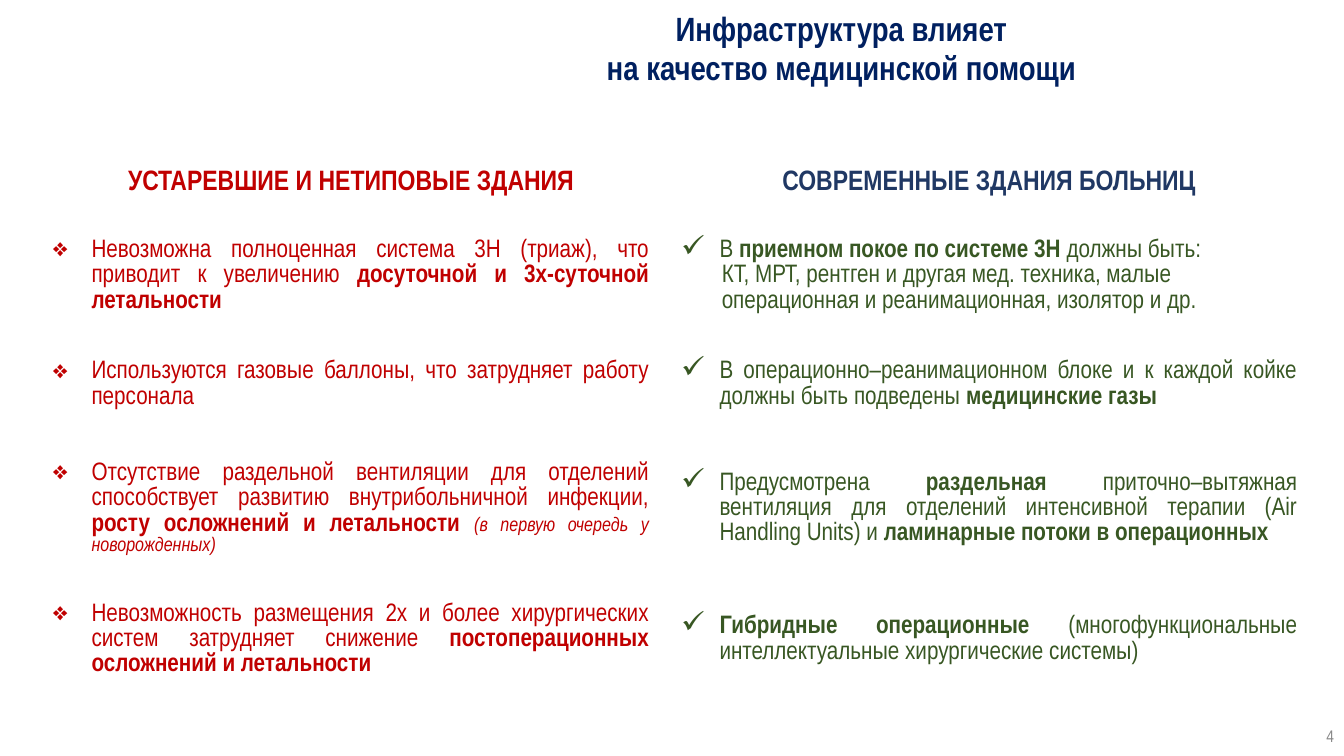
from lxml.etree import SubElement
from pptx import Presentation
from pptx.dml.color import RGBColor
from pptx.enum.shapes import MSO_SHAPE as Shape
from pptx.enum.text import MSO_ANCHOR as Anchor, PP_ALIGN as Align
from pptx.oxml.ns import qn
from pptx.util import Pt

THEME = {
    "font": "Arial Narrow",
    "title": "002060", "old": "C00000", "modern": "385723",
    "modern_heading": "203864", "number": "888888",
    "title_size": 24, "heading_size": 20, "body_size": 18,
    "note_size": 14, "number_size": 12,
}

TITLE = ["Инфраструктура влияет", "на качество медицинской помощи"]
PAGE_NUMBER = "4"

# Each cell is a list of paragraphs, each paragraph a list of (text, style) runs.
OLD = {
    "heading": "УСТАРЕВШИЕ И НЕТИПОВЫЕ ЗДАНИЯ",
    "heading_color": THEME["old"], "color": THEME["old"],
    "bullet": "❖", "bullet_percent": 100,
    "cells": [
        [[("Невозможна полноценная система 3Н (триаж), что приводит к увеличению ", ""),
          ("досуточной и 3х-суточной летальности", "bold")]],
        [[("Используются газовые баллоны, что затрудняет работу персонала", "")]],
        [[("Отсутствие раздельной вентиляции для отделений способствует "
           "развитию внутрибольничной инфекции, ", ""),
          ("росту осложнений и летальности ", "bold"),
          ("(в первую очередь у новорожденных)", "note")]],
        [[("Невозможность размещения 2х и более хирургических систем "
           "затрудняет снижение ", ""),
          ("постоперационных осложнений и летальности", "bold")]],
    ],
}
MODERN = {
    "heading": "СОВРЕМЕННЫЕ ЗДАНИЯ БОЛЬНИЦ",
    "heading_color": THEME["modern_heading"], "color": THEME["modern"],
    "bullet": "✓", "bullet_percent": 120,
    "cells": [
        [[("В ", ""), ("приемном покое по системе 3Н ", "bold"), ("должны быть:", "")],
         [("КТ, МРТ, рентген и другая мед. техника, малые", "")],
         [("операционная и реанимационная, изолятор и др.", "")]],
        [[("В операционно–реанимационном блоке и к каждой койке "
           "должны быть подведены ", ""),
          ("медицинские газы", "bold")]],
        [[("Предусмотрена ", ""), ("раздельная ", "bold"),
          ("приточно–вытяжная вентиляция для отделений интенсивной терапии "
           "(Air Handling Units) и ", ""),
          ("ламинарные потоки в операционных", "bold")]],
        [[("Гибридные операционные ", "bold"),
          ("(многофункциональные интеллектуальные хирургические системы)", "")]],
    ],
}

SLIDE_SIZE = (960, 540)
TITLE_BOX = (242, 5, 718, 64)
NUMBER_BOX = (784.5, 511, 175.5, 29)
TABLE_ORIGIN = (33, 105)
COLUMN_WIDTHS = (435.6, 13, 450)
ROW_HEIGHTS = (50.4, 82.8, 72.7, 104.4, 82.8)
BULLET_INDENT = 27.4
CONTINUATION_INDENT = 29
TABLE_SPACING = 1.07


def points(values):
    return [Pt(value) for value in values]


def add_run(paragraph, text, size, color, bold=False, italic=False):
    run = paragraph.add_run()
    run.text = text
    font = run.font
    font.name, font.size = THEME["font"], Pt(size)
    font.bold, font.italic = bold, italic
    font.color.rgb = RGBColor.from_string(color)


def paragraphs_of(frame, count):
    """Return the first paragraph of the frame and as many new ones as needed."""
    return [frame.paragraphs[0]] + [frame.add_paragraph() for _ in range(count - 1)]


def indent(paragraph, left, first=0):
    properties = paragraph._p.get_or_add_pPr()
    properties.set("marL", str(Pt(left)))
    properties.set("indent", str(Pt(first)))
    return properties


def add_bullet(paragraph, side):
    properties = indent(paragraph, BULLET_INDENT, -BULLET_INDENT)
    color = SubElement(properties, qn("a:buClr"))
    SubElement(color, qn("a:srgbClr"), val=side["color"])
    SubElement(properties, qn("a:buSzPct"), val=str(side["bullet_percent"] * 1000))
    SubElement(properties, qn("a:buChar"), char=side["bullet"])


def add_title(slide):
    shape = slide.shapes.add_shape(Shape.ROUNDED_RECTANGLE, *points(TITLE_BOX))
    shape.adjustments[0] = 0.3
    shape.shadow.inherit = False
    shape.fill.background()
    shape.line.fill.background()
    frame = shape.text_frame
    frame.word_wrap = True
    frame.vertical_anchor = Anchor.MIDDLE
    frame.margin_left = frame.margin_right = Pt(3.6)
    for paragraph, line in zip(paragraphs_of(frame, len(TITLE)), TITLE):
        paragraph.alignment = Align.CENTER
        paragraph.line_spacing = 0.75
        paragraph.space_before = Pt(6)
        add_run(paragraph, line, THEME["title_size"], THEME["title"], bold=True)


def fill_heading(cell, side):
    paragraph = cell.text_frame.paragraphs[0]
    paragraph.alignment = Align.CENTER
    paragraph.line_spacing = TABLE_SPACING
    add_run(paragraph, side["heading"], THEME["heading_size"],
            side["heading_color"], bold=True)


def fill_body(cell, side, content):
    paragraphs = paragraphs_of(cell.text_frame, len(content))
    for index, (paragraph, runs) in enumerate(zip(paragraphs, content)):
        paragraph.alignment = Align.JUSTIFY
        paragraph.line_spacing = TABLE_SPACING
        if index == 0:
            add_bullet(paragraph, side)
        else:
            indent(paragraph, CONTINUATION_INDENT)
        for text, style in runs:
            size = THEME["note_size" if style == "note" else "body_size"]
            add_run(paragraph, text, size, side["color"],
                    bold=style == "bold", italic=style == "note")


def add_comparison(slide):
    size = (sum(COLUMN_WIDTHS), sum(ROW_HEIGHTS))
    table = slide.shapes.add_table(len(ROW_HEIGHTS), len(COLUMN_WIDTHS),
                                   *points(TABLE_ORIGIN + size)).table
    table.first_row = table.horz_banding = False
    for column, width in zip(table.columns, COLUMN_WIDTHS):
        column.width = Pt(width)
    for row, height in zip(table.rows, ROW_HEIGHTS):
        row.height = Pt(height)
    for cell in table.iter_cells():
        cell.fill.background()
        cell.vertical_anchor = Anchor.MIDDLE
        cell.margin_left = cell.margin_right = Pt(5)
        cell.margin_top = cell.margin_bottom = 0
    for column, side in ((0, OLD), (2, MODERN)):
        fill_heading(table.cell(0, column), side)
        for row, content in enumerate(side["cells"], start=1):
            fill_body(table.cell(row, column), side, content)


def add_page_number(slide):
    frame = slide.shapes.add_textbox(*points(NUMBER_BOX)).text_frame
    frame.word_wrap = True
    frame.vertical_anchor = Anchor.MIDDLE
    paragraph = frame.paragraphs[0]
    paragraph.alignment = Align.RIGHT
    add_run(paragraph, PAGE_NUMBER, THEME["number_size"], THEME["number"])


def main():
    presentation = Presentation()
    presentation.slide_width, presentation.slide_height = points(SLIDE_SIZE)
    slide = presentation.slides.add_slide(presentation.slide_layouts[6])
    add_title(slide)
    add_comparison(slide)
    add_page_number(slide)
    presentation.save("out.pptx")


if __name__ == "__main__":
    main()
